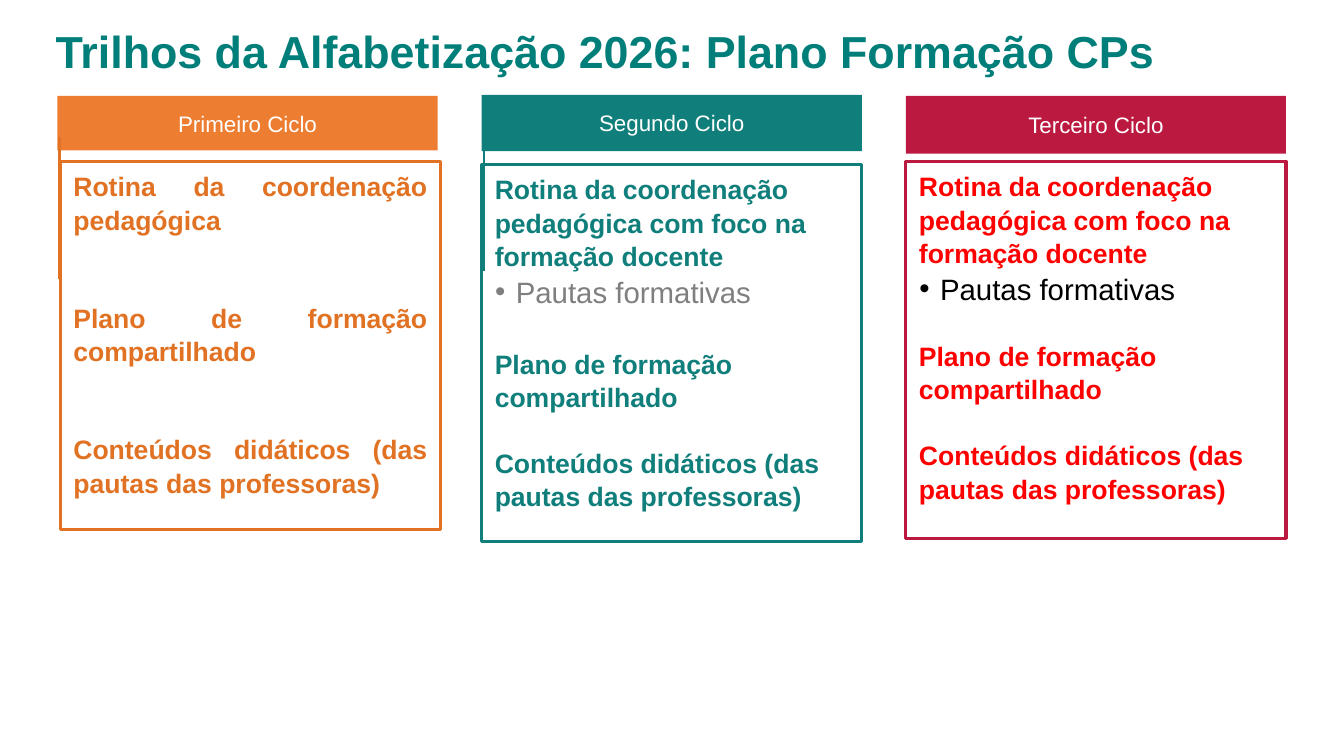
import pptx
import pptx.util
import pptx.dml.color
import pptx.enum.text
import pptx.enum.shapes
import pptx.oxml.ns
import lxml.etree

Cm, Pt = pptx.util.Cm, pptx.util.Pt
RGBColor = pptx.dml.color.RGBColor
ALIGN = pptx.enum.text.PP_ALIGN
ANCHOR = pptx.enum.text.MSO_ANCHOR
qn = pptx.oxml.ns.qn

TITLE_TEAL = RGBColor(0x00, 0x7E, 0x79)
TEAL = RGBColor(0x10, 0x7F, 0x7B)
ORANGE = RGBColor(0xED, 0x7D, 0x31)
DARK_ORANGE = RGBColor(0xE1, 0x72, 0x23)
CRIMSON = RGBColor(0xBC, 0x19, 0x41)
RED = RGBColor(0xFF, 0x00, 0x00)
GRAY = RGBColor(0x7F, 0x7F, 0x7F)
BLACK = RGBColor(0x00, 0x00, 0x00)
WHITE = RGBColor(0xFF, 0xFF, 0xFF)

COL_LEFT, COL_PITCH, COL_WIDTH = 1.45, 10.69, 9.58

ROUTINE = "Rotina da coordenação pedagógica"
ROUTINE_FOCUS = ROUTINE + " com foco na formação docente"
AGENDAS = "Pautas formativas"
PLAN = "Plano de formação compartilhado"
CONTENTS = "Conteúdos didáticos (das pautas das professoras)"


def write(p, text, size=19, color=BLACK, bold=False, align=ALIGN.LEFT,
          before=0, spacing=1.0, bullet=False):
    p.alignment = align
    p.line_spacing = spacing
    p.space_before = Pt(before)
    if bullet:
        pPr = p._p.get_or_add_pPr()
        pPr.set("marL", str(Cm(0.53)))
        pPr.set("indent", str(-Cm(0.52)))
        font = lxml.etree.SubElement(pPr, qn("a:buFont"))
        font.set("typeface", "Arial")
        lxml.etree.SubElement(pPr, qn("a:buChar")).set("char", "•")
    r = p.add_run()
    r.text = text
    r.font.name = "Arial"
    r.font.size = Pt(size)
    r.font.bold = bold
    r.font.color.rgb = color


class Deck:
    def __init__(self, width, height):
        self.prs = pptx.Presentation()
        self.prs.slide_width, self.prs.slide_height = Cm(width), Cm(height)
        self.slide = self.prs.slides.add_slide(self.prs.slide_layouts[5])

    def frame(self, sp, anchor, x=0.0, y=0.0):
        tf = sp.text_frame
        tf.word_wrap = True
        tf.auto_size = pptx.enum.text.MSO_AUTO_SIZE.NONE
        tf.vertical_anchor = anchor
        tf.margin_left = tf.margin_right = Cm(x)
        tf.margin_top = tf.margin_bottom = Cm(y)
        return tf

    def title(self, text, left, top, width, height):
        sp = self.slide.shapes.title
        sp.left, sp.top, sp.width, sp.height = map(Cm, (left, top, width, height))
        tf = self.frame(sp, ANCHOR.TOP)
        write(tf.paragraphs[0], text, size=32, color=TITLE_TEAL, bold=True)

    def rect(self, left, top, height, fill=None, line=None):
        sp = self.slide.shapes.add_shape(
            pptx.enum.shapes.MSO_SHAPE.RECTANGLE,
            Cm(left), Cm(top), Cm(COL_WIDTH), Cm(height))
        sp.shadow.inherit = False
        if fill is None:
            sp.fill.background()
        else:
            sp.fill.solid()
            sp.fill.fore_color.rgb = fill
        if line is None:
            sp.line.fill.background()
        else:
            sp.line.color.rgb = line
            sp.line.width = Pt(2.25)
        return sp

    def header(self, text, left, top, height, fill):
        tf = self.frame(self.rect(left, top, height, fill), ANCHOR.MIDDLE, 0.25, 0.13)
        write(tf.paragraphs[0], text, size=16, color=WHITE, align=ALIGN.CENTER)

    def panel(self, left, top, height, line, items, fill=None, **style):
        tf = self.frame(self.rect(left, top, height, fill, line), ANCHOR.TOP, 0.33, 0.18)
        for i, (text, extra) in enumerate(items):
            p = tf.add_paragraph() if i else tf.paragraphs[0]
            write(p, text, **{"bold": True, "spacing": 1.05, **style, **extra})

    def rule(self, x, top, bottom, color):
        c = self.slide.shapes.add_connector(
            pptx.enum.shapes.MSO_CONNECTOR.STRAIGHT, Cm(x), Cm(top), Cm(x), Cm(bottom))
        c.line.color.rgb = color
        c.line.width = Pt(1.5)
        lxml.etree.SubElement(c._element.spPr, qn("a:effectLst"))


def cycle_items(bullet_color, plan_gap):
    return [
        (ROUTINE_FOCUS, {}),
        (AGENDAS, {"size": 21, "color": bullet_color, "bold": False, "bullet": True}),
        (PLAN, {"before": plan_gap}),
        (CONTENTS, {"before": 23}),
    ]


def main():
    deck = Deck(33.87, 19.05)
    deck.title("Trilhos da Alfabetização 2026: Plano Formação CPs", 1.4, 0.6, 31, 1.4)

    first, second, third = (COL_LEFT + i * COL_PITCH for i in range(3))
    deck.header("Primeiro Ciclo", first, 2.42, 1.37, ORANGE)
    deck.header("Segundo Ciclo", second, 2.39, 1.42, TEAL)
    deck.header("Terceiro Ciclo", third, 2.42, 1.45, CRIMSON)

    first_items = [(ROUTINE, {}), (PLAN, {"before": 46}), (CONTENTS, {"before": 46})]
    deck.panel(first + 0.07, 4.07, 9.27, DARK_ORANGE, first_items,
               fill=WHITE, color=DARK_ORANGE, align=ALIGN.JUSTIFY)
    deck.panel(second, 4.14, 9.5, TEAL, cycle_items(GRAY, 26.5), color=TEAL)
    deck.panel(third, 4.07, 9.5, CRIMSON, cycle_items(BLACK, 23), color=RED)

    deck.rule(first + 0.05, 3.45, 7.04, DARK_ORANGE)
    deck.rule(second + 0.05, 3.45, 6.83, TEAL)
    deck.prs.save("out.pptx")


if __name__ == "__main__":
    main()
